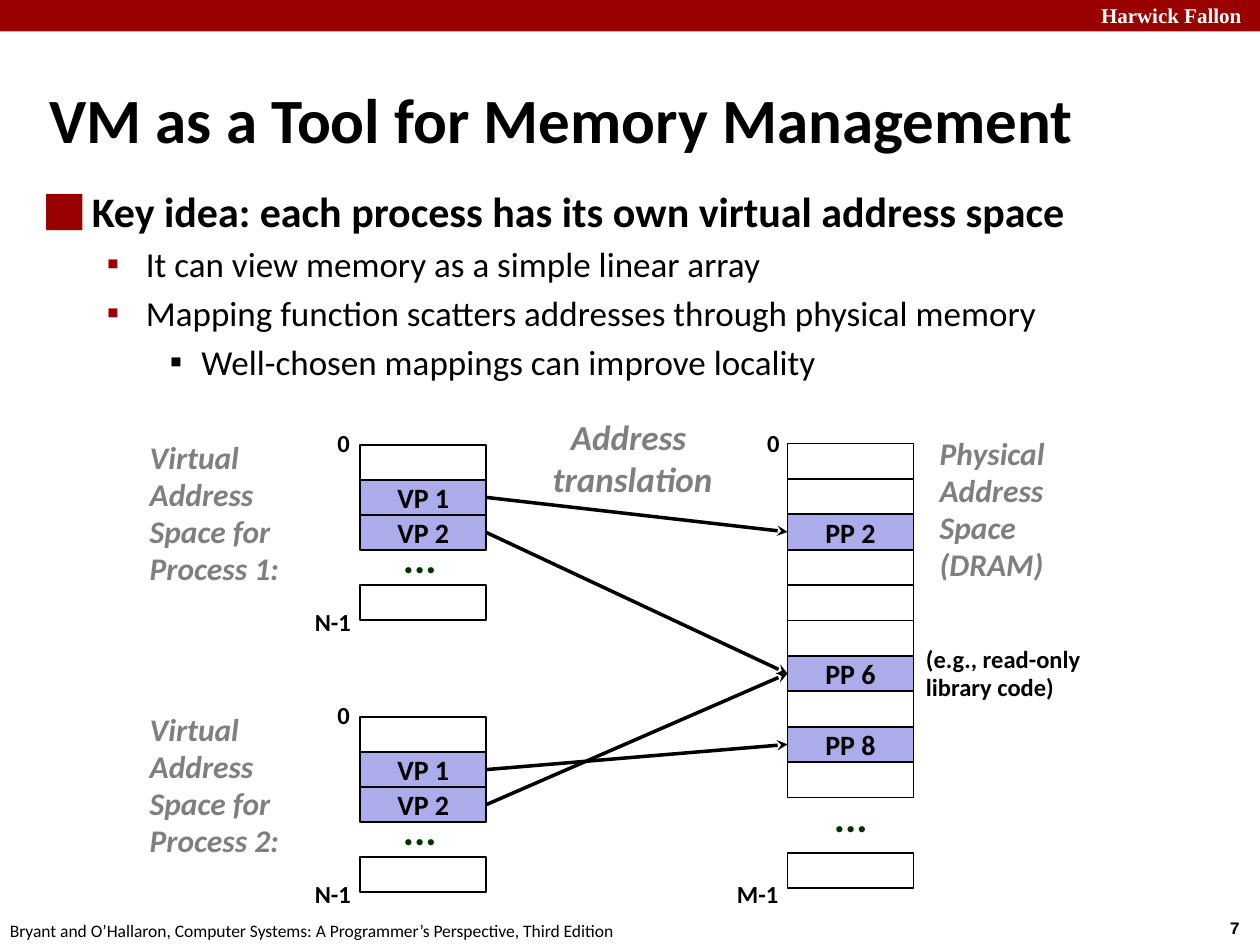
"""Build a slide on virtual memory as a tool for memory management."""
import dataclasses
import typing

import lxml.etree
import pptx
import pptx.dml.color
import pptx.enum.shapes
import pptx.enum.text
import pptx.oxml.ns
import pptx.util

COLS, ROWS = 100, 75
ALIGN = pptx.enum.text.PP_ALIGN
ANCHOR = pptx.enum.text.MSO_ANCHOR
RECT = pptx.enum.shapes.MSO_SHAPE.RECTANGLE


def rgb(value: str) -> pptx.dml.color.RGBColor:
    return pptx.dml.color.RGBColor.from_string(value)


@dataclasses.dataclass(frozen=True)
class Theme:
    font: str = "Calibri"
    red: str = "990000"
    black: str = "000000"
    white: str = "FFFFFF"
    grey: str = "7F7F7F"
    green: str = "003300"
    page: str = "ACACEA"
    title: int = 36
    key: int = 24
    body: int = 20
    caption: int = 18
    cell: int = 16
    label: int = 14
    brand: int = 12
    small: int = 10


T = Theme()


@dataclasses.dataclass(frozen=True)
class Style:
    size: int
    color: str = T.black
    bold: bool = True
    italic: bool = False
    name: str = T.font
    align: typing.Optional[int] = None
    spacing: typing.Optional[float] = None
    wrap: bool = True


CAPTION = Style(T.caption, T.grey, italic=True, spacing=0.98)
LABEL = Style(T.label, spacing=0.98, wrap=False)
DOTS = Style(T.key, T.green, spacing=0.88, wrap=False)
CELL = Style(T.cell, align=ALIGN.CENTER)


@dataclasses.dataclass(frozen=True)
class Label:
    text: str
    box: tuple
    style: Style


@dataclasses.dataclass(frozen=True)
class Bullet:
    text: str
    level: int
    margin: float
    hang: float
    mark: str
    color: str
    style: Style
    before: int = 4


@dataclasses.dataclass(frozen=True)
class Memory:
    left: float
    top: float
    pitch: float
    count: int
    last: float
    pages: dict


LABELS = [
    Label("Harwick Fallon", (86.4, -0.3, 14.3, 3),
          Style(T.brand, T.white, name="Times New Roman", wrap=False)),
    Label("7", (96.6, 72.3, 4.5, 2.7), Style(T.small, name="Courier New")),
    Label("Bryant and O’Hallaron, Computer Systems: A Programmer’s Perspective, Third Edition",
          (-0.2, 72.5, 50.8, 2.7), Style(T.small, bold=False, wrap=False)),
    Label("Physical\nAddress\nSpace (DRAM)", (73.6, 34.1, 11.7, 12.9), CAPTION),
    Label("(e.g., read-only\nlibrary code)", (72.5, 50.7, 15.9, 5.6), LABEL),
    Label("Address \ntranslation", (42.8, 32.5, 14.8, 7.7),
          Style(T.body, T.grey, italic=True, align=ALIGN.CENTER)),
    Label("0", (59.9, 33.6, 3.1, 3.3), LABEL),
    Label("M-1", (57.5, 69.4, 5.3, 3.3), LABEL),
    Label("...", (65.2, 62.8, 4.7, 4.5), DOTS),
]
SUB = Style(T.body, bold=False)
BULLETS = [
    Bullet("Key idea: each process has its own virtual address space",
           0, 3.8, 3.8, "⬛", T.red, Style(T.key), 0),
    Bullet("It can view memory as a simple linear array", 1, 8.1, 3.1, "▪", T.red, SUB),
    Bullet("Mapping function scatters addresses through physical memory",
           1, 8.1, 3.1, "▪", T.red, SUB),
    Bullet("Well-chosen mappings can improve locality", 2, 12.5, 2.5, "▪", T.black, SUB),
]
PHYSICAL = Memory(62.5, 35.2, 2.81, 10, 67.7, {2: "PP 2", 6: "PP 6", 8: "PP 8"})
PROCESS_TOPS = (35.3, 56.9)
MAPPINGS = [(0, 1, 2), (0, 2, 6), (1, 2, 6), (1, 1, 8)]


def grid(prs, *values: float) -> list:
    """Turn alternating column and row counts into slide lengths."""
    units = (prs.slide_width / COLS, prs.slide_height / ROWS)
    return [pptx.util.Emu(round(v * units[i % 2])) for i, v in enumerate(values)]


def write(p, text: str, style: Style) -> None:
    r = p.add_run()
    r.text = text
    for key in ("size", "bold", "italic", "name"):
        value = getattr(style, key)
        setattr(r.font, key, pptx.util.Pt(value) if key == "size" else value)
    r.font.color.rgb = rgb(style.color)
    for key, value in {"alignment": style.align, "line_spacing": style.spacing}.items():
        setattr(p, key, value)


def indent(prs, p, margin: float, hang: float) -> None:
    left, _, first = grid(prs, margin, 0, -hang)
    for key, value in {"marL": left, "indent": first}.items():
        p._p.get_or_add_pPr().set(key, str(int(value)))


def add_label(prs, s, label: Label) -> None:
    tf = s.shapes.add_textbox(*grid(prs, *label.box)).text_frame
    tf.word_wrap = label.style.wrap
    for i, line in enumerate(label.text.split("\n")):
        write(tf.add_paragraph() if i else tf.paragraphs[0], line, label.style)


def add_title(prs, s, text: str) -> None:
    sp = s.shapes.title
    for key, value in zip(("left", "top", "width", "height"), grid(prs, 2.9, 6.2, 94.2, 6.3)):
        setattr(sp, key, value)
    tf = sp.text_frame
    tf.auto_size = pptx.enum.text.MSO_AUTO_SIZE.NONE
    tf.vertical_anchor = ANCHOR.MIDDLE
    write(tf.paragraphs[0], text, Style(T.title, align=ALIGN.LEFT))
    indent(prs, tf.paragraphs[0], 1.3, 1.3)


def add_bullets(prs, s, bullets: list) -> None:
    tf = s.shapes.add_textbox(*grid(prs, 2.5, 14.2, 85.9, 13.8)).text_frame
    tf.word_wrap = True
    qn = pptx.oxml.ns.qn
    for i, b in enumerate(bullets):
        p = tf.add_paragraph() if i else tf.paragraphs[0]
        p.level = b.level
        p.space_before = pptx.util.Pt(b.before)
        write(p, b.text, b.style)
        indent(prs, p, b.margin, b.hang)
        pPr = p._p.get_or_add_pPr()
        color = lxml.etree.SubElement(pPr, qn("a:buClr"))
        lxml.etree.SubElement(color, qn("a:srgbClr"), val=b.color)
        lxml.etree.SubElement(pPr, qn("a:buFont"), typeface=T.font)
        lxml.etree.SubElement(pPr, qn("a:buChar"), char=b.mark)


def add_rect(prs, s, box: tuple, fill: str = "", line: str = ""):
    sp = s.shapes.add_shape(RECT, *grid(prs, *box))
    sp.shadow.inherit = False
    for target, color in ((sp.fill, fill), (sp.line.fill, line)):
        if color:
            target.solid()
            target.fore_color.rgb = rgb(color)
        else:
            target.background()
    if line:
        sp.line.width = pptx.util.Pt(1)
    return sp


def add_memory(prs, s, m: Memory) -> list:
    """Draw the cells of a memory and return them from top to bottom."""
    cells = []
    for i, top in enumerate([m.top + n * m.pitch for n in range(m.count)] + [m.last]):
        page = m.pages.get(i, "")
        sp = add_rect(prs, s, (m.left, top, 10, 2.8), T.page if page else "", T.black)
        if page:
            sp.text_frame.vertical_anchor = ANCHOR.MIDDLE
            write(sp.text_frame.paragraphs[0], page, CELL)
        cells.append(sp)
    return cells


def add_process(prs, s, number: int, top: float) -> list:
    for label in (
        Label(f"Virtual Address Space for Process {number}:", (10.9, top - 0.9, 15, 12.8), CAPTION),
        Label("0", (25.8, top - 1.7, 3.1, 3.3), LABEL),
        Label("N-1", (24, top + 12.5, 4.9, 3.3), LABEL),
        Label("...", (31, top + 6.9, 4.7, 4.5), DOTS),
    ):
        add_label(prs, s, label)
    return add_memory(prs, s, Memory(28.6, top, 2.78, 3, top + 11.1, {1: "VP 1", 2: "VP 2"}))


def add_mapping(s, virtual, physical) -> None:
    cx = s.shapes.add_connector(pptx.enum.shapes.MSO_CONNECTOR.STRAIGHT, 0, 0, 0, 0)
    cx.begin_connect(virtual, 3)
    cx.end_connect(physical, 1)
    cx.line.width = pptx.util.Pt(2)
    cx.line.color.rgb = rgb(T.black)
    qn = pptx.oxml.ns.qn
    lxml.etree.SubElement(cx.line._get_or_add_ln(), qn("a:tailEnd"), type="stealth")
    lxml.etree.SubElement(cx._element.spPr, qn("a:effectLst"))


def main() -> None:
    prs = pptx.Presentation()
    prs.slide_width, prs.slide_height = pptx.util.Inches(10), pptx.util.Inches(7.5)
    s = prs.slides.add_slide(prs.slide_layouts[5])
    add_rect(prs, s, (0, 0, COLS, 2.5), T.red)
    add_title(prs, s, "VM as a Tool for Memory Management")
    add_bullets(prs, s, BULLETS)
    for label in LABELS:
        add_label(prs, s, label)
    processes = [add_process(prs, s, n, top) for n, top in enumerate(PROCESS_TOPS, 1)]
    physical = add_memory(prs, s, PHYSICAL)
    for process, virtual_page, physical_page in MAPPINGS:
        add_mapping(s, processes[process][virtual_page], physical[physical_page])
    prs.save("out.pptx")


if __name__ == "__main__":
    main()
